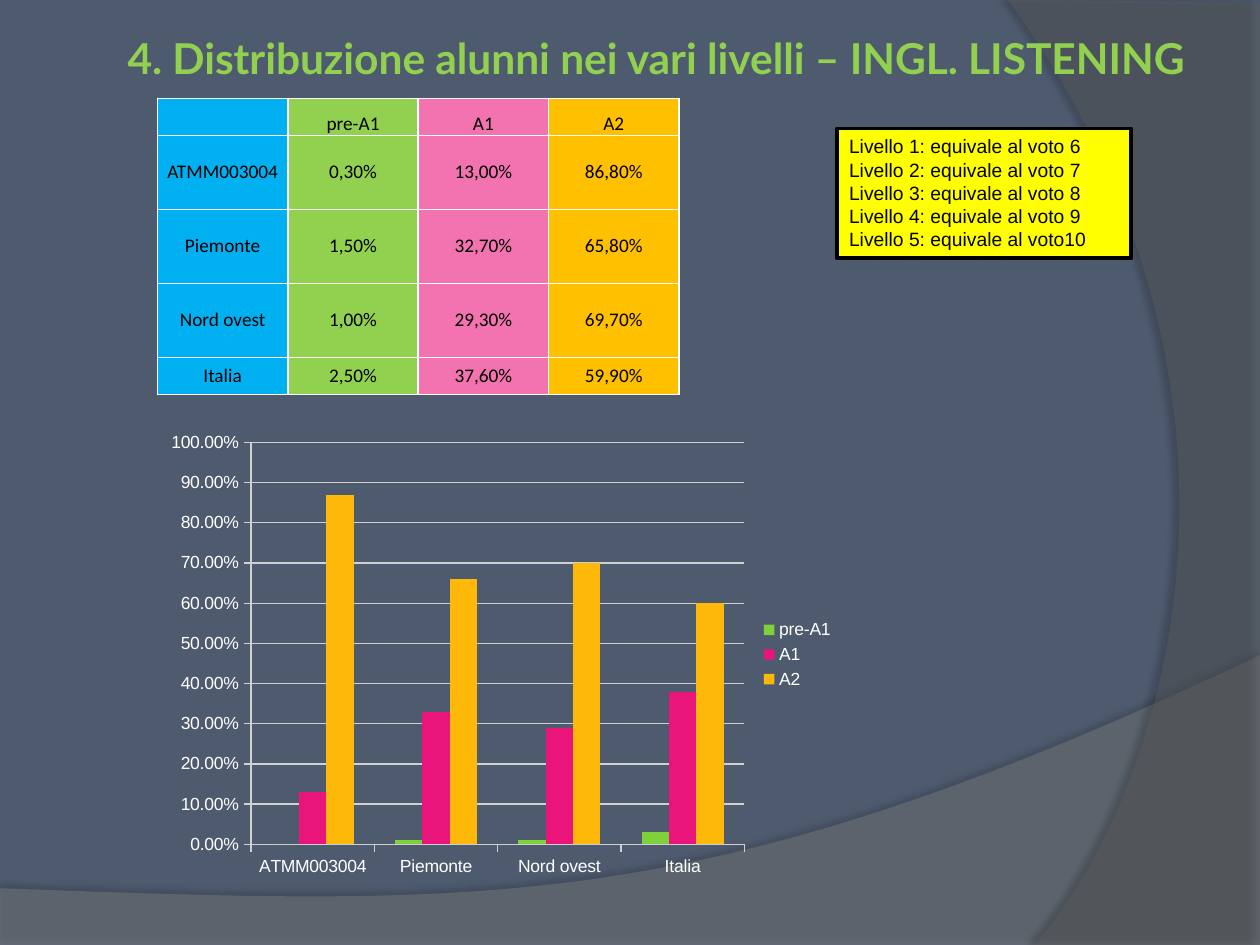
from lxml import etree
from pptx import Presentation
from pptx.chart.data import CategoryChartData
from pptx.dml.color import RGBColor
from pptx.enum.chart import XL_CHART_TYPE, XL_LEGEND_POSITION, XL_TICK_MARK
from pptx.enum.shapes import MSO_SHAPE
from pptx.enum.text import MSO_ANCHOR, PP_ALIGN
from pptx.oxml.ns import qn
from pptx.util import Inches, Pt

COLUMN = XL_CHART_TYPE.COLUMN_CLUSTERED
RIGHT = XL_LEGEND_POSITION.RIGHT
OUTSIDE = XL_TICK_MARK.OUTSIDE
RECT = MSO_SHAPE.RECTANGLE
TOP, MIDDLE, BOTTOM = MSO_ANCHOR.TOP, MSO_ANCHOR.MIDDLE, MSO_ANCHOR.BOTTOM
LEFT, CENTER = PP_ALIGN.LEFT, PP_ALIGN.CENTER

SLATE = RGBColor(0x4E, 0x5B, 0x6F)
GRAY = RGBColor(0x7F, 0x7F, 0x7F)
DARK_GRAY = RGBColor(0x5E, 0x5E, 0x5E)
LIGHT_GRAY = RGBColor(0xD0, 0xD0, 0xD0)
BLACK = RGBColor(0, 0, 0)
WHITE = RGBColor(0xFF, 0xFF, 0xFF)
YELLOW = RGBColor(0xFF, 0xFF, 0)
GREEN = RGBColor(0x92, 0xD0, 0x50)
COLUMN_FILLS = [RGBColor(0x00, 0xB0, 0xF0), GREEN,
                RGBColor(0xF2, 0x73, 0xAF), RGBColor(0xFF, 0xC0, 0x00)]
SERIES_FILLS = [RGBColor(0x7F, 0xD1, 0x3B), RGBColor(0xEA, 0x15, 0x7A),
                RGBColor(0xFE, 0xB8, 0x0A)]

LEVELS = ["pre-A1", "A1", "A2"]
RESULTS = {
    "ATMM003004": [0.3, 13, 86.8],
    "Piemonte": [1.5, 32.7, 65.8],
    "Nord ovest": [1, 29.3, 69.7],
    "Italia": [2.5, 37.6, 59.9],
}
GRADES = [
    ["Livello 1: equivale al voto 6"],
    ["Livello 2: equivale al voto 7"],
    ["Livello 3: equivale al voto 8", "Livello 4: equivale al voto 9",
     "Livello 5: equivale al voto10"],
]


def add_run(p, text, size, font, color, bold=False):
    r = p.add_run()
    r.text = text
    r.font.size, r.font.name, r.font.bold = Pt(size), font, bold
    r.font.color.rgb = color


def add_alpha(color, percent):
    etree.SubElement(color, qn("a:alpha"), val=str(percent * 1000))


def curve_last_segment(s, controls):
    """Turn the last straight segment into a cubic curve."""
    line = s._element.findall(".//" + qn("a:lnTo"))[-1]
    curve = etree.Element(qn("a:cubicBezTo"))
    for x, y in controls:
        etree.SubElement(curve, qn("a:pt"), x=str(Inches(x) - s.left),
                         y=str(Inches(y) - s.top))
    curve.append(line[0])
    line.getparent().replace(line, curve)


def add_wave(slide, points, controls, color, alpha, shadow_alpha, distance, direction):
    """Translucent outline with a soft shadow, curved on its last segment."""
    start, *rest = [(Inches(x), Inches(y)) for x, y in points]
    builder = slide.shapes.build_freeform(*start)
    builder.add_line_segments(rest, close=True)
    s = builder.convert_to_shape()
    curve_last_segment(s, controls)
    s.fill.solid()
    s.fill.fore_color.rgb = color
    s.line.fill.background()
    s.shadow.inherit = False
    sp_pr = s._element.spPr
    add_alpha(sp_pr.find(qn("a:solidFill"))[0], alpha)
    shadow = etree.SubElement(
        sp_pr.find(qn("a:effectLst")), qn("a:outerShdw"), blurRad=str(Pt(4)),
        dist=str(Pt(distance)), dir=str(direction * 60000), rotWithShape="0")
    add_alpha(etree.SubElement(shadow, qn("a:srgbClr"), val="000000"), shadow_alpha)


def add_background(slide):
    fill = slide.background.fill
    fill.solid()
    fill.fore_color.rgb = SLATE
    bottom = [(0, 7.05), (0, 7.51), (10, 7.51), (10, 5.2), (0, 7.05)]
    side = [(10, 0.02), (10, 7.5), (8.21, 7.5), (8, 0)]
    add_wave(slide, bottom, [(5.59, 7.29), (3.91, 7.19)], GRAY, 45, 35, 3.5, 270)
    add_wave(slide, side, [(9.35, 6.19), (10.18, 3)], DARK_GRAY, 40, 45, 4, 180)


def set_title(slide, x, y, w, h):
    title = slide.shapes.title
    slide.shapes._spTree.append(title._element)  # in front of the waves
    title.left, title.top, title.width, title.height = x, y, w, h
    tf = title.text_frame
    tf.word_wrap = True
    tf.vertical_anchor = MIDDLE
    tf.margin_left = tf.margin_bottom = Inches(0.05)
    tf.margin_right = Inches(0.13)
    tf.margin_top = Inches(0.17)
    p = tf.paragraphs[0]
    p.alignment = CENTER
    add_run(p, "4. Distribuzione alunni nei vari livelli – INGL. LISTENING",
            24.3, "Lato", GREEN, bold=True)


def add_grade_box(slide, x, y, w, h):
    s = slide.shapes.add_shape(RECT, x, y, w, h)
    s.shadow.inherit = False
    s.fill.solid()
    s.fill.fore_color.rgb = YELLOW
    s.line.color.rgb = BLACK
    s.line.width = Pt(2.25)
    tf = s.text_frame
    tf.word_wrap = True
    tf.vertical_anchor = TOP
    for i, lines in enumerate(GRADES):
        p = tf.add_paragraph() if i else tf.paragraphs[0]
        p.alignment = LEFT
        for j, line in enumerate(lines):
            if j:
                p.add_line_break()
            add_run(p, line, 11, "Arial", BLACK)


def add_borders(cell):
    tc_pr = cell._tc.get_or_add_tcPr()
    for i, side in enumerate(["lnL", "lnR", "lnT", "lnB"]):
        ln = etree.Element(qn(f"a:{side}"), w=str(Pt(1)))
        fill = etree.SubElement(ln, qn("a:solidFill"))
        etree.SubElement(fill, qn("a:srgbClr"), val=str(WHITE))
        tc_pr.insert(i, ln)


def add_results_table(slide, x, y, w, h):
    rows = [["", *LEVELS]]
    for area, values in RESULTS.items():
        rows.append([area] + [f"{v:.2f}%".replace(".", ",") for v in values])
    table = slide.shapes.add_table(len(rows), len(rows[0]), x, y, w, h).table
    for col in table.columns:
        col.width = w // len(rows[0])
    units = [1, 2, 2, 2, 1]
    for i, row in enumerate(rows):
        table.rows[i].height = h * units[i] // sum(units)
        for j, text in enumerate(row):
            cell = table.cell(i, j)
            cell.fill.solid()
            cell.fill.fore_color.rgb = COLUMN_FILLS[j]
            cell.margin_left = cell.margin_right = 0
            cell.margin_top = cell.margin_bottom = 0
            cell.vertical_anchor = MIDDLE if i else BOTTOM
            p = cell.text_frame.paragraphs[0]
            p.alignment = CENTER
            add_run(p, text, 11, "Calibri", BLACK)
            add_borders(cell)


def add_results_chart(slide, x, y, w, h):
    data = CategoryChartData(number_format="0.00%")
    data.categories = list(RESULTS)
    for level, values in zip(LEVELS, zip(*RESULTS.values())):
        data.add_series(level, [round(v / 100, 2) for v in values])
    chart = slide.shapes.add_chart(COLUMN, x, y, w, h, data).chart
    chart.has_title = False
    chart.font.size, chart.font.name = Pt(10), "Arial"
    chart.font.color.rgb = WHITE
    chart.has_legend = True
    chart.legend.position = RIGHT
    chart.legend.include_in_layout = False
    plot = chart.plots[0]
    plot.gap_width, plot.overlap = 150, 0
    plot.vary_by_categories = False
    for series, color in zip(plot.series, SERIES_FILLS):
        series.format.fill.solid()
        series.format.fill.fore_color.rgb = color
    for axis in (chart.category_axis, chart.value_axis):
        axis.major_tick_mark = OUTSIDE
        axis.format.line.color.rgb = LIGHT_GRAY
    axis = chart.value_axis
    axis.minimum_scale, axis.maximum_scale, axis.major_unit = 0, 1, 0.1
    axis.has_major_gridlines = True
    axis.major_gridlines.format.line.color.rgb = LIGHT_GRAY
    axis.tick_labels.number_format = "0.00%"
    axis.tick_labels.number_format_is_linked = False


def main():
    prs = Presentation()
    prs.slide_width, prs.slide_height = Inches(10), Inches(7.5)
    slide = prs.slides.add_slide(prs.slide_layouts[5])
    add_background(slide)
    set_title(slide, Inches(0.5), Inches(0), Inches(9.5), Inches(0.79))
    add_grade_box(slide, Inches(6.64), Inches(1.02), Inches(2.34), Inches(1.03))
    add_results_table(slide, Inches(1.25), Inches(0.78), Inches(4.14), Inches(2.35))
    add_results_chart(slide, Inches(1.25), Inches(3.36), Inches(5.47), Inches(3.67))
    prs.save("out.pptx")


if __name__ == "__main__":
    main()
